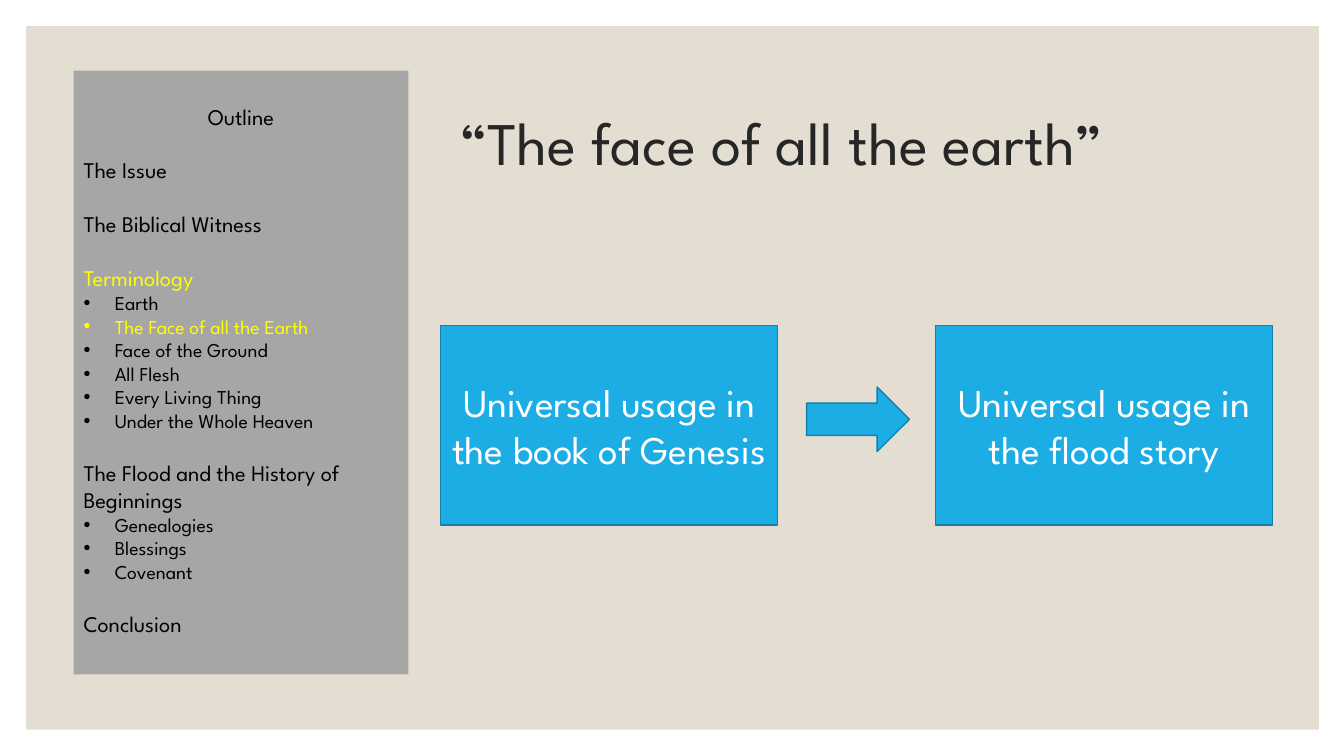
from lxml import etree
from pptx import Presentation
from pptx.dml.color import RGBColor
from pptx.enum.shapes import MSO_SHAPE
from pptx.enum.text import MSO_ANCHOR, MSO_AUTO_SIZE, PP_ALIGN
from pptx.oxml.ns import qn
from pptx.util import Inches, Pt

RECTANGLE, RIGHT_ARROW = MSO_SHAPE.RECTANGLE, MSO_SHAPE.RIGHT_ARROW
TOP, MIDDLE = MSO_ANCHOR.TOP, MSO_ANCHOR.MIDDLE
LEFT, CENTER = PP_ALIGN.LEFT, PP_ALIGN.CENTER
NO_AUTOFIT = MSO_AUTO_SIZE.NONE

FONT = "League Spartan"
BLACK, WHITE, YELLOW = "000000", "FFFFFF", "FFFF00"
BEIGE, GREY, CHARCOAL = "E3DED1", "A6A6A6", "262626"
BLUE, DARK_BLUE = "1CADE4", "1580A9"

OUTLINE = [
    ("The Issue", []),
    ("The Biblical Witness", []),
    ("Terminology", ["Earth", "The Face of all the Earth", "Face of the Ground",
                     "All Flesh", "Every Living Thing", "Under the Whole Heaven"]),
    ("The Flood and the History of Beginnings",
     ["Genealogies", "Blessings", "Covenant"]),
    ("Conclusion", []),
]
CURRENT = {"Terminology", "The Face of all the Earth"}


def rgb(color):
    return RGBColor.from_string(color)


def add_block(slide, preset, left, top, width, height, fill, line=None):
    block = slide.shapes.add_shape(
        preset, Inches(left), Inches(top), Inches(width), Inches(height))
    block.shadow.inherit = False
    block.fill.solid()
    block.fill.fore_color.rgb = rgb(fill)
    if line:
        block.line.color.rgb = rgb(line)
        block.line.width = Pt(1)
    else:
        block.line.fill.background()
    return block


def write(paragraph, wording, size, color, align=LEFT):
    paragraph.text = wording
    paragraph.alignment = align
    paragraph.font.name = FONT
    paragraph.font.size = Pt(size)
    paragraph.font.color.rgb = rgb(color)


def add_bullet(paragraph):
    properties = paragraph._p.get_or_add_pPr()
    properties.set("marL", str(Inches(0.31)))
    properties.set("indent", str(-Inches(0.31)))
    etree.SubElement(properties, qn("a:buFont")).set("typeface", "Arial")
    etree.SubElement(properties, qn("a:buChar")).set("char", "•")


def add_backdrop(slide):
    backdrop = add_block(slide, RECTANGLE, 0.26, 0.26, 12.82, 6.98, BEIGE)
    slide.shapes._spTree.insert(2, backdrop._element)


def set_title(slide, wording):
    title = slide.shapes.title
    title.left, title.top = Inches(4.46), Inches(0.7)
    title.width, title.height = Inches(8.14), Inches(1.5)
    frame = title.text_frame
    frame.auto_size = NO_AUTOFIT
    frame.vertical_anchor = MIDDLE
    write(frame.paragraphs[0], wording, 43.2, CHARCOAL)
    frame.paragraphs[0].line_spacing = 0.9


def add_outline(slide):
    panel = add_block(slide, RECTANGLE, 0.73, 0.7, 3.32, 5.99, GREY)
    frame = panel.text_frame
    frame.word_wrap = True
    frame.vertical_anchor = TOP
    frame.margin_top = Inches(0.32)
    write(frame.paragraphs[0], "Outline", 16, BLACK, CENTER)
    for section, topics in OUTLINE:
        heading = frame.add_paragraph()
        write(heading, section, 16, YELLOW if section in CURRENT else BLACK)
        heading.space_before = Pt(19.2)
        for topic in topics:
            item = frame.add_paragraph()
            write(item, topic, 14, YELLOW if topic in CURRENT else BLACK)
            add_bullet(item)


def add_claim(slide, left, wording):
    claim = add_block(slide, RECTANGLE, left, 3.23, 3.34, 1.98, BLUE, DARK_BLUE)
    frame = claim.text_frame
    frame.word_wrap = True
    frame.vertical_anchor = MIDDLE
    write(frame.paragraphs[0], wording, 28, WHITE, CENTER)


def main():
    deck = Presentation()
    deck.slide_width, deck.slide_height = Inches(13.33), Inches(7.5)
    slide = deck.slides.add_slide(deck.slide_layouts[5])
    add_backdrop(slide)
    set_title(slide, "“The face of all the earth”")
    add_outline(slide)
    add_claim(slide, 4.37, "Universal usage in the book of Genesis")
    add_claim(slide, 9.28, "Universal usage in the flood story")
    add_block(slide, RIGHT_ARROW, 8, 3.84, 1.02, 0.64, BLUE, DARK_BLUE)
    deck.save("out.pptx")


if __name__ == "__main__":
    main()
